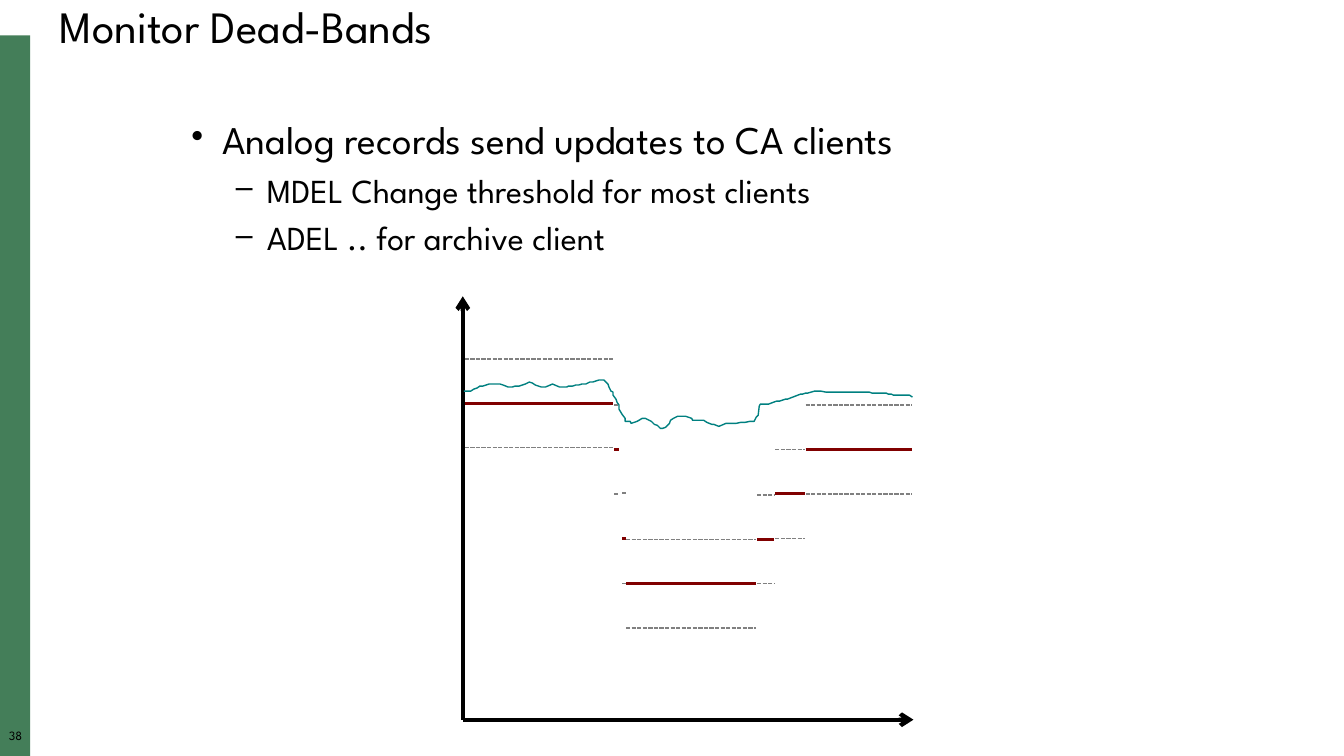
from dataclasses import dataclass

from lxml import etree
from pptx import Presentation
from pptx.dml.color import RGBColor
from pptx.enum.dml import MSO_LINE
from pptx.enum.shapes import MSO_CONNECTOR as CONN, MSO_SHAPE as SHAPE
from pptx.enum.text import MSO_ANCHOR as ANCHOR, MSO_AUTO_SIZE as AUTO, PP_ALIGN as ALIGN
from pptx.oxml.ns import qn
from pptx.util import Pt

PX = 9144  # EMU per px, 100 px to the inch
FONT = "League Spartan"
BLACK = RGBColor(0x00, 0x00, 0x00)
GREEN = RGBColor(0x44, 0x7E, 0x59)
TEAL = RGBColor(0x00, 0x80, 0x80)
GRAY = RGBColor(0x80, 0x80, 0x80)
MAROON = RGBColor(0x80, 0x00, 0x00)
ORIGIN = (459, 714)


@dataclass
class Bullet:
    text: str
    size: int
    level: int
    indent: int
    mark: str
    before: int


@dataclass
class Band:
    left: int
    right: int
    value: int
    delta: int


BULLETS = [
    Bullet("Analog records send updates to CA clients", 28, 0, 31, "•", 0),
    Bullet("MDEL Change threshold for most clients", 24, 1, 75, "–", 8),
    Bullet("ADEL .. for archive client", 24, 1, 75, "–", 8),
]

BANDS = [
    Band(461, 608, 400, 44),
    Band(621, 750, 579, 44),
    Band(751, 768, 535, 44),
    Band(769, 798, 490, 44),
    Band(799, 905, 446, 44),
    Band(609, 614, 446, 44),
    Band(617, 621, 534, 45),
]

SIGNAL = [
    (460, 388), (467, 388), (470, 386), (473, 385), (476, 383), (479, 383),
    (485, 381), (496, 381), (499, 382), (504, 384), (508, 384), (511, 383),
    (515, 383), (521, 381), (525, 379), (528, 380), (531, 382), (537, 384),
    (541, 384), (548, 381), (555, 384), (562, 384), (564, 383), (568, 383),
    (571, 382), (574, 382), (577, 381), (581, 381), (585, 379), (588, 379),
    (594, 377), (599, 377), (601, 379), (603, 381), (604, 384), (606, 388),
    (608, 389), (608, 392), (611, 396), (612, 399), (614, 402), (614, 406),
    (617, 411), (620, 415), (620, 418), (625, 418), (626, 420), (632, 418),
    (637, 415), (640, 415), (646, 418), (649, 421), (652, 422), (655, 425),
    (657, 425), (660, 424), (664, 420), (665, 417), (668, 415), (672, 413),
    (680, 413), (686, 415), (687, 417), (698, 417), (701, 419), (706, 421),
    (708, 421), (713, 423), (720, 420), (730, 420), (735, 419), (739, 419),
    (744, 418), (748, 418), (750, 414), (752, 412), (753, 403), (754, 401),
    (762, 401), (770, 398), (773, 398), (779, 396), (781, 396), (794, 391),
    (796, 391), (799, 390), (801, 390), (808, 388), (814, 388), (819, 389),
    (862, 389), (865, 390), (879, 390), (881, 391), (884, 391), (886, 392),
    (902, 392), (905, 394),
]


def add_run(p, text: str, size: float) -> None:
    r = p.add_run()
    r.text = text
    r.font.name = FONT
    r.font.size = Pt(size)
    r.font.color.rgb = BLACK


def add_text_frame(s, x: int, y: int, w: int, h: int):
    tf = s.shapes.add_textbox(x * PX, y * PX, w * PX, h * PX).text_frame
    tf.word_wrap = True
    return tf


def add_line(s, start: tuple[int, int], end: tuple[int, int], color: RGBColor,
             width: float, dashed: bool = False, arrow: bool = False) -> None:
    line = s.shapes.add_connector(CONN.STRAIGHT, *(v * PX for v in start + end))
    line.line.color.rgb = color
    line.line.width = Pt(width)
    if dashed:
        line.line.dash_style = MSO_LINE.SQUARE_DOT
    if arrow:
        etree.SubElement(line.line._get_or_add_ln(), qn("a:tailEnd"), type="arrow")
    etree.SubElement(line._element.spPr, qn("a:effectLst"))


def add_bullet(p, item: Bullet) -> None:
    p.level = item.level
    p.line_spacing = 0.9
    p.space_before = Pt(item.before)
    ppr = p._p.get_or_add_pPr()
    ppr.set("marL", str(item.indent * PX))
    ppr.set("indent", str(-31 * PX))
    color = etree.SubElement(ppr, qn("a:buClr"))
    etree.SubElement(color, qn("a:srgbClr"), val=str(BLACK))
    etree.SubElement(ppr, qn("a:buSzPct"), val="90000")
    etree.SubElement(ppr, qn("a:buChar"), char=item.mark)
    add_run(p, item.text, item.size)


def add_band(s, band: Band) -> None:
    for y in (band.value + band.delta, band.value - band.delta):
        add_line(s, (band.left, y), (band.right, y), GRAY, 1, dashed=True)
    add_line(s, (band.left, band.value), (band.right, band.value), MAROON, 2.15)


def main() -> None:
    prs = Presentation()
    prs.slide_width, prs.slide_height = 1333 * PX, 750 * PX
    s = prs.slides.add_slide(prs.slide_layouts[5])

    # Side bar and slide number
    bar = s.shapes.add_shape(SHAPE.RECTANGLE, 0, 35 * PX, 30 * PX, 715 * PX)
    bar.shadow.inherit = False
    bar.fill.solid()
    bar.fill.fore_color.rgb = GREEN
    bar.line.fill.background()
    tf = add_text_frame(s, 0, 724, 31, 17)
    tf.margin_left = tf.margin_right = tf.margin_top = tf.margin_bottom = 0
    p = tf.paragraphs[0]
    p.alignment = ALIGN.CENTER
    p.line_spacing = 0.9
    add_run(p, "38", 9)

    # Title
    title = s.shapes.title
    title.left, title.top = 49 * PX, 0
    title.width, title.height = 1250 * PX, 59 * PX
    tf = title.text_frame
    tf.auto_size = AUTO.NONE
    tf.vertical_anchor = ANCHOR.TOP
    p = tf.paragraphs[0]
    p.alignment = ALIGN.LEFT
    p.line_spacing = 0.9
    add_run(p, "Monitor Dead-Bands", 32)

    # Bullets
    tf = add_text_frame(s, 180, 115, 894, 180)
    for i, item in enumerate(BULLETS):
        add_bullet(tf.add_paragraph() if i else tf.paragraphs[0], item)

    # Axes
    for tip in ((459, 294), (906, 714)):
        add_line(s, ORIGIN, tip, BLACK, 3, arrow=True)

    # Signal curve
    builder = s.shapes.build_freeform(*SIGNAL[0], scale=PX)
    builder.add_line_segments(SIGNAL[1:], close=False)
    sp = builder.convert_to_shape()
    sp.shadow.inherit = False
    sp.fill.background()
    sp.line.color.rgb = TEAL
    sp.line.width = Pt(1)

    # Last sent values with their dead-bands
    for band in BANDS:
        add_band(s, band)

    prs.save("out.pptx")


if __name__ == "__main__":
    main()
